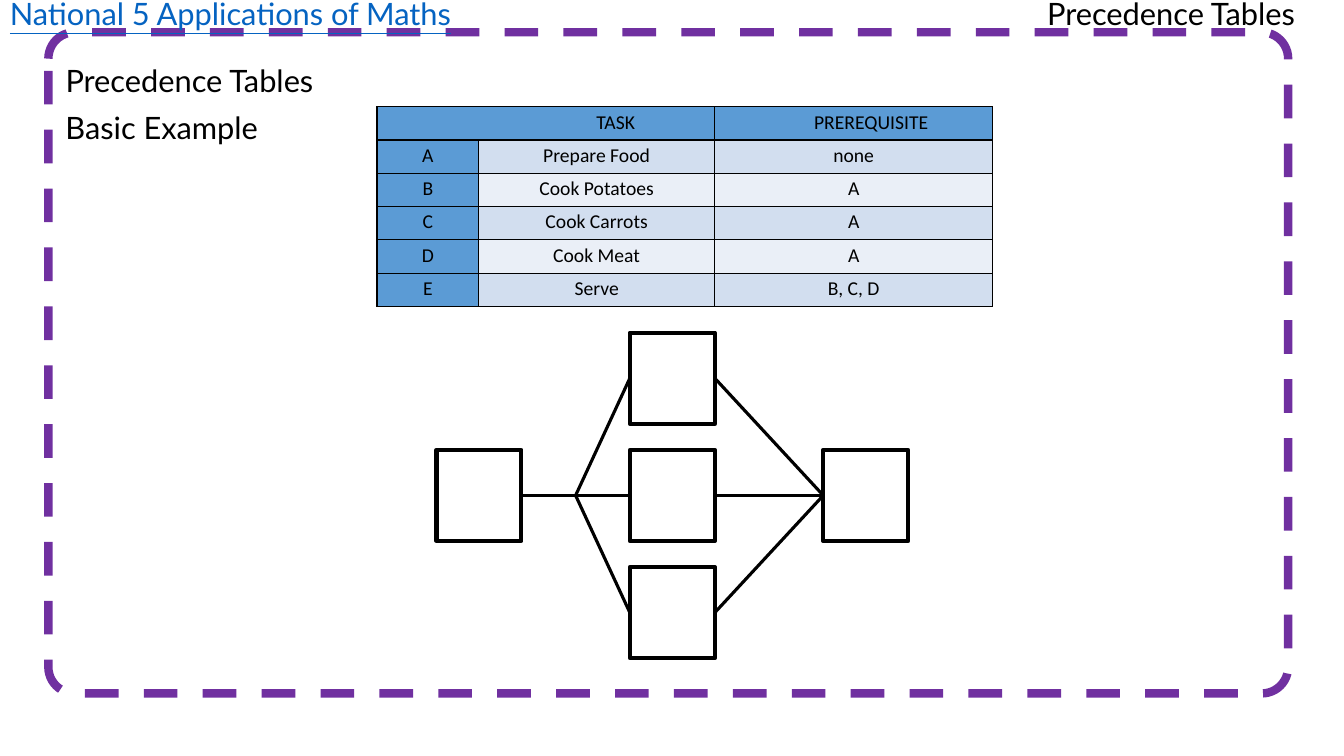
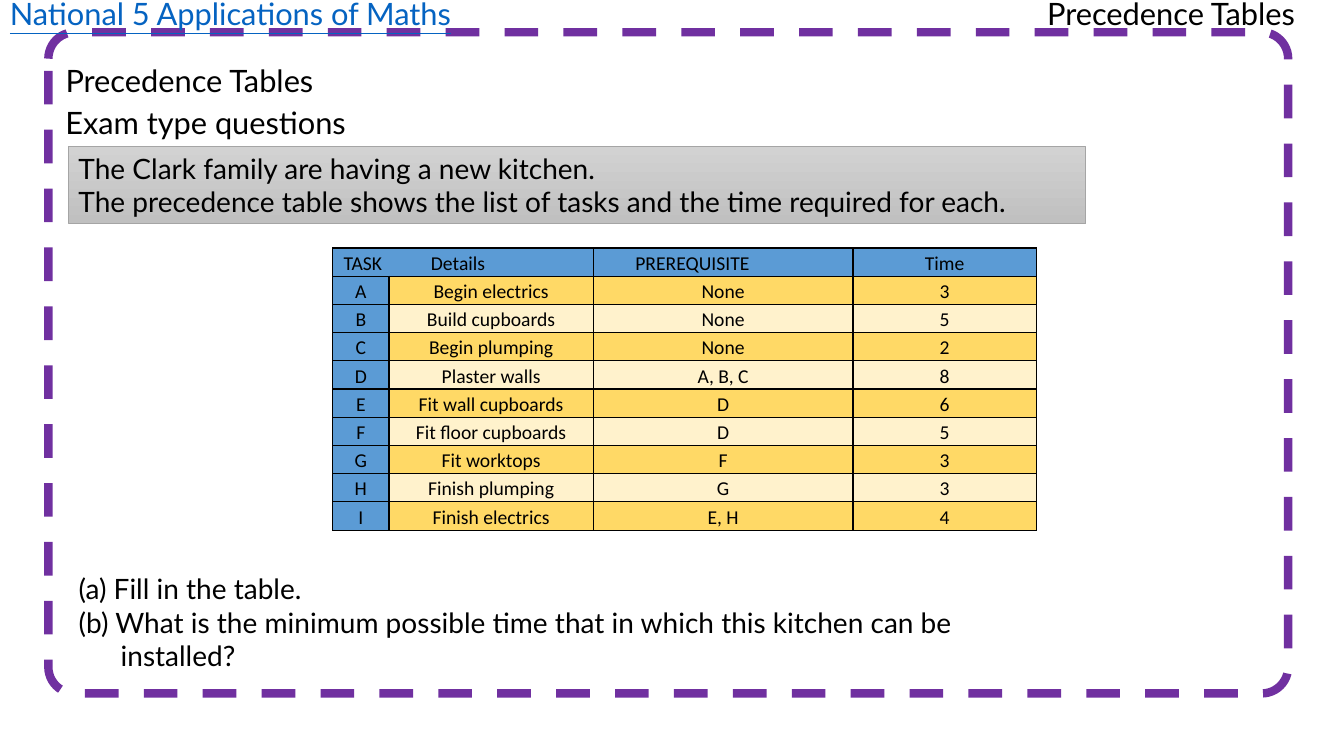
from lxml import etree
from pptx import Presentation
from pptx import util as u
from pptx.dml.color import RGBColor
from pptx.enum import dml, shapes, text
from pptx.oxml import ns

BLACK = RGBColor(0x00, 0x00, 0x00)
PURPLE = RGBColor(0x70, 0x30, 0xA0)
LINK = RGBColor(0x05, 0x63, 0xC1)
BLUE = RGBColor(0x5B, 0x9B, 0xD5)
ICE = (RGBColor(0xD2, 0xDE, 0xEF), RGBColor(0xEA, 0xEF, 0xF7))
GOLD = (RGBColor(0xFF, 0xD9, 0x66), RGBColor(0xFF, 0xF2, 0xCC))
SILVER = (RGBColor(0xD2, 0xD2, 0xD2), RGBColor(0xC0, 0xC0, 0xC0))
GREY = RGBColor(0xA5, 0xA5, 0xA5)

WIDE, HIGH = u.Inches(13.33), u.Inches(7.5)
COLS, ROWS = 160, 90
TOPIC = "Precedence Tables"
LEFT, MID = text.PP_ALIGN.LEFT, text.PP_ALIGN.CENTER


def col(n):
    return int(WIDE * n / COLS)


def row(n):
    return int(HIGH * n / ROWS)


def place(box):
    x, y, w, h = box
    return col(x), row(y), col(w), row(h)


def add(par, tag, **attrs):
    return etree.SubElement(par, ns.qn(tag), attrs)


def write(frame, words, size=22, face="Lato", color=BLACK, align=LEFT):
    frame.text = words
    for par in frame.paragraphs:
        par.alignment = align
        for run in par.runs:
            run.font.size = u.Pt(size)
            run.font.name = face
            run.font.color.rgb = color


def label(slide, box, words, color=BLACK):
    frame = slide.shapes.add_textbox(*place(box)).text_frame
    frame.word_wrap = False
    write(frame, words, color=color)
    return frame


def holder(shape, box, words, size=22):
    shape.left, shape.top, shape.width, shape.height = place(box)
    frame = shape.text_frame
    frame.auto_size = text.MSO_AUTO_SIZE.NONE
    frame.vertical_anchor = text.MSO_ANCHOR.TOP
    frame.word_wrap = True
    write(frame, words, size)
    return frame


def shape(slide, kind, at, color, width):
    item = slide.shapes.add_shape(kind, *at)
    item.shadow.inherit = False
    item.fill.background()
    item.line.color.rgb = color
    item.line.width = u.Pt(width)
    return item


def base(deck, layout, sub, box):
    slide = deck.slides.add_slide(deck.slide_layouts[layout])
    rim = shape(slide, shapes.MSO_SHAPE.ROUNDED_RECTANGLE,
                place((5.76, 3.84, 147.6, 78.72)), PURPLE, 6)
    rim.adjustments[0] = 0.04
    rim.line.dash_style = dml.MSO_LINE.DASH
    label(slide, (123.48, -1.2, 32.88, 5.64), TOPIC)
    course = label(slide, (0, -1.2, 55.56, 5.64),
                   "National 5 Applications of Maths", LINK)
    course.paragraphs[0].runs[0].font.underline = True
    holder(slide.shapes.title, (6.6, 6.72, 40, 5.64), TOPIC)
    label(slide, box, sub)
    return slide


def border(cell):
    props = cell._tc.get_or_add_tcPr()
    for n, side in enumerate(("a:lnL", "a:lnR", "a:lnT", "a:lnB")):
        line = add(props, side, w=str(u.Pt(1)))
        add(add(line, "a:solidFill"), "a:srgbClr", val=str(BLACK))
        props.insert(n, line)


def grid(slide, box, widths, rows, bands):
    x, y, w, h = place(box)
    table = slide.shapes.add_table(len(rows), len(widths), x, y, w, h).table
    table.first_row = table.horz_banding = False
    for c, part in enumerate(widths):
        table.columns[c].width = int(w * part / sum(widths))
    for r, words in enumerate(rows):
        table.rows[r].height = h // len(rows)
        for c, word in enumerate(words):
            cell = table.cell(r, c)
            cell.margin_left = cell.margin_right = col(0.84)
            cell.margin_top = cell.margin_bottom = 0
            write(cell.text_frame, word, 14, "Calibri", align=MID)
            cell.text_frame.paragraphs[0].line_spacing = 1.15
            cell.fill.solid()
            head = r == 0 or c == 0
            cell.fill.fore_color.rgb = BLUE if head else bands[(r - 1) % 2]
            border(cell)
    table.cell(0, 0).merge(table.cell(0, 1))
    return table


def shift(cell, left, align):
    cell.margin_left = col(left)
    cell.text_frame.paragraphs[0].alignment = align


def link(slide, start, end=None, spot=(0, 0), side=3):
    wire = slide.shapes.add_connector(shapes.MSO_CONNECTOR.STRAIGHT, 0, 0, *spot)
    wire.begin_connect(start, side)
    if end is not None:
        wire.end_connect(end, 1)
    wire.line.color.rgb = BLACK
    wire.line.width = u.Pt(2.25)
    add(wire._element.spPr, "a:effectLst")


def network(slide, box):
    x, y, w, h = place(box)
    wide, high = int(w * 0.18), int(h * 0.28)
    dx, dy = (w - wide) // 2, (h - high) // 2

    def node(c, r):
        at = (x + c * dx, y + r * dy, wide, high)
        return shape(slide, shapes.MSO_SHAPE.RECTANGLE, at, BLACK, 3)

    first, last = node(0, 1), node(2, 1)
    tasks = [node(1, r) for r in range(3)]
    fork = (x + (wide + dx) // 2, y + h // 2)
    link(slide, first, tasks[1])
    for task in tasks:
        link(slide, task, last)
    for task in tasks[::2]:
        link(slide, task, spot=fork, side=1)


def note(slide, box, words):
    panel = shape(slide, shapes.MSO_SHAPE.RECTANGLE, place(box), GREY, 0.5)
    panel.fill.gradient()
    panel.fill.gradient_angle = 270
    for n, stop in enumerate(panel.fill.gradient_stops):
        stop.position = n
        stop.color.rgb = SILVER[n]
    panel.text_frame.word_wrap = True
    write(panel.text_frame, words, 20)


def ask(slide, box, words):
    frame = holder(slide.placeholders[1], box, words, 20)
    for par in frame.paragraphs:
        par.space_before = u.Pt(0)
        props = par._p.get_or_add_pPr()
        props.set("marL", str(col(5)))
        props.set("indent", str(-col(5)))
        add(props, "a:buNone")


def basic(deck):
    slide = base(deck, 5, "Basic Example", (6.6, 12.36, 25.92, 5.64))
    table = grid(slide, (44.88, 12.72, 73.32, 23.76), (1.01, 2.34, 2.76), (
        ("TASK", "", "PREREQUISITE"),
        ("A", "Prepare Food", "none"),
        ("B", "Cook Potatoes", "A"),
        ("C", "Cook Carrots", "A"),
        ("D", "Cook Meat", "A"),
        ("E", "Serve", "B, C, D"),
    ), ICE)
    shift(table.cell(0, 0), 17.5, MID)
    shift(table.cell(0, 2), 5, MID)
    network(slide, (51.96, 39.6, 56.16, 38.76))


def exam(deck):
    slide = base(deck, 1, "Exam type questions", (6.6, 11.76, 36.48, 5.64))
    note(slide, (8.16, 17.4, 121.08, 9.24),
         "The Clark family are having a new kitchen.\n"
         "The precedence table shows the list of tasks and the time "
         "required for each.")
    table = grid(slide, (39.6, 29.52, 83.76, 33.6), (0.56, 2.03, 2.58, 1.82), (
        ("TASK\tDetails", "", "PREREQUISITE", "Time"),
        ("A", "Begin electrics", "None", "3"),
        ("B", "Build cupboards", "None", "5"),
        ("C", "Begin plumping", "None", "2"),
        ("D", "Plaster walls", "A, B, C", "8"),
        ("E", "Fit wall cupboards", "D", "6"),
        ("F", "Fit floor cupboards", "D", "5"),
        ("G", "Fit worktops", "F", "3"),
        ("H", "Finish plumping", "G", "3"),
        ("I", "Finish electrics", "E, H", "4"),
    ), GOLD)
    task = table.cell(0, 0)
    shift(task, 1.3, LEFT)
    shift(table.cell(0, 2), 5, LEFT)
    props = task.text_frame.paragraphs[0]._p.get_or_add_pPr()
    add(add(props, "a:tabLst"), "a:tab", pos=str(col(10.4)), algn="l")
    ask(slide, (8.16, 67.44, 139.2, 13.32),
        "(a) Fill in the table.\n"
        "(b) What is the minimum possible time that in which this kitchen "
        "can be\vinstalled?")


def main():
    deck = Presentation()
    deck.slide_width, deck.slide_height = WIDE, HIGH
    basic(deck)
    exam(deck)
    deck.save("out.pptx")


if __name__ == "__main__":
    main()
